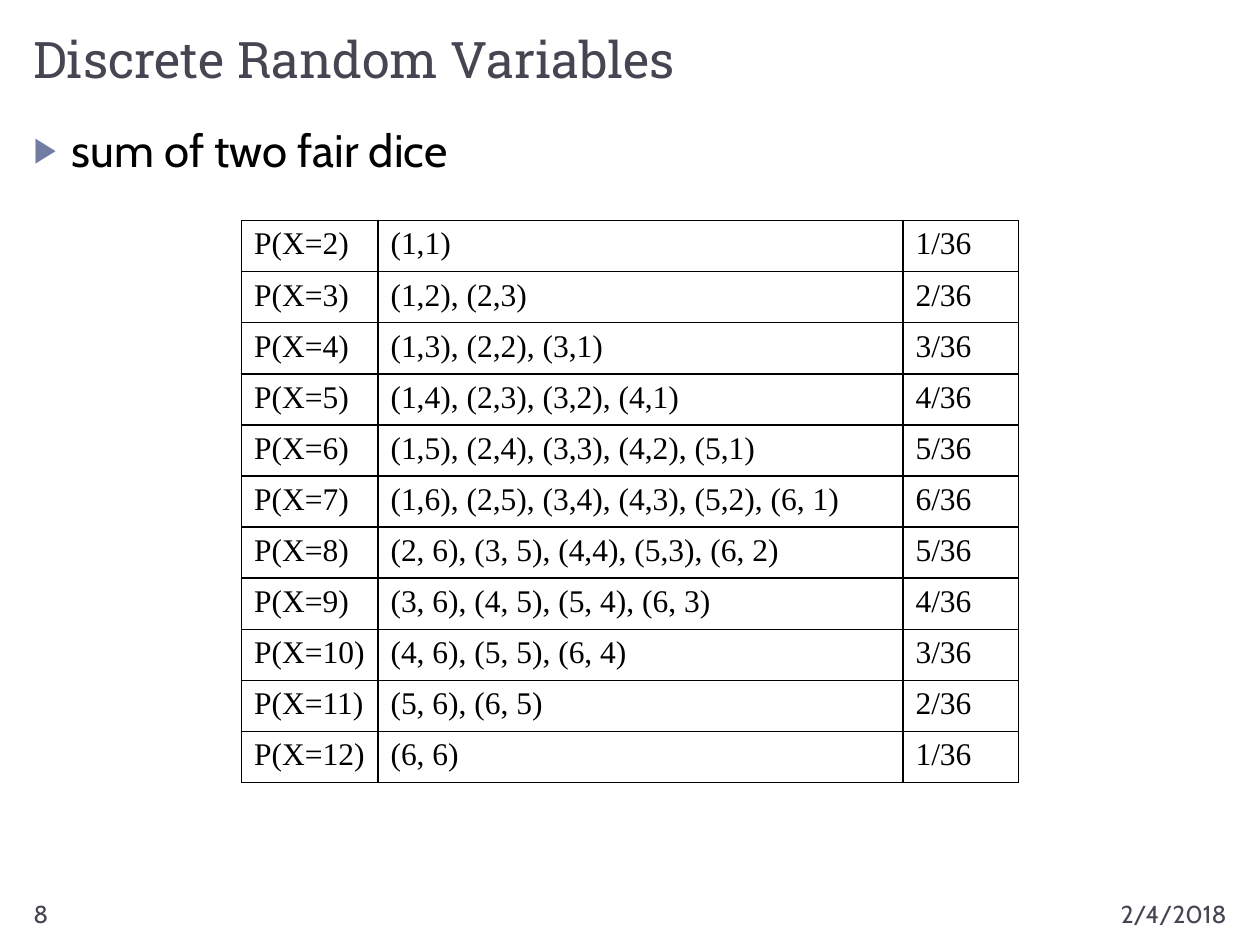
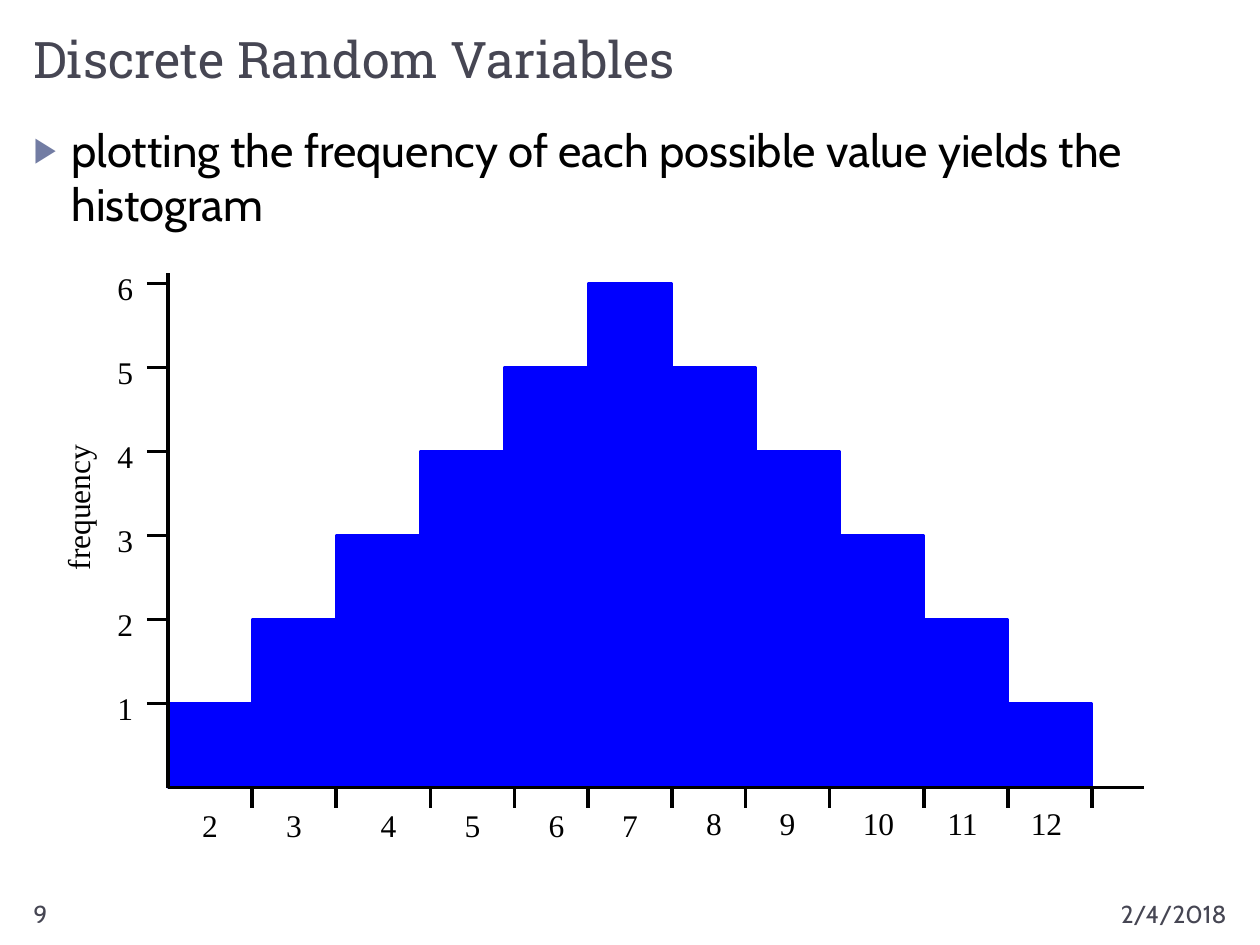
"""Build two slides on the sum of two fair dice: a probability table and a histogram."""
import pptx
import pptx.dml.color
import pptx.enum.shapes
import pptx.enum.text
import pptx.oxml.ns
import pptx.util
from lxml import etree

Pt = pptx.util.Pt
ALIGN = pptx.enum.text.PP_ALIGN
ANCHOR = pptx.enum.text.MSO_ANCHOR

TITLE = "Discrete Random Variables"
DATE = "2/4/2018"
TABLE_PAGE = ("8", "sum of two fair dice")
CHART_PAGE = ("9", "plotting the frequency of each possible value yields the histogram")
OUTCOMES = [
    ("P(X=2)", "(1,1)", "1/36"),
    ("P(X=3)", "(1,2), (2,3)", "2/36"),
    ("P(X=4)", "(1,3), (2,2), (3,1)", "3/36"),
    ("P(X=5)", "(1,4), (2,3), (3,2), (4,1)", "4/36"),
    ("P(X=6)", "(1,5), (2,4), (3,3), (4,2), (5,1)", "5/36"),
    ("P(X=7)", "(1,6), (2,5), (3,4), (4,3), (5,2), (6, 1)", "6/36"),
    ("P(X=8)", "(2, 6), (3, 5), (4,4), (5,3), (6, 2)", "5/36"),
    ("P(X=9)", "(3, 6), (4, 5), (5, 4), (6, 3)", "4/36"),
    ("P(X=10)", "(4, 6), (5, 5), (6, 4)", "3/36"),
    ("P(X=11)", "(5, 6), (6, 5)", "2/36"),
    ("P(X=12)", "(6, 6)", "1/36"),
]
FREQUENCIES = [1, 2, 3, 4, 5, 6, 5, 4, 3, 2, 1]
SUM_TICKS = [144, 192, 246, 294, 336, 384, 426, 474, 528, 576, 624]
SUM_CENTRES = [120, 168, 222, 270, 318, 360, 408, 450, 502, 550, 598]
Y_LABEL = "frequency"

HEAD_FONT, BODY_FONT, FIGURE_FONT = "Roboto Slab", "Cabin", "Times New Roman"
BLACK, WHITE, SLATE, BAR, BULLET = "000000", "FFFFFF", "464653", "0000FF", "727CA3"
MARGIN, CONTENT_W = 12, 696
COLUMNS = [78, 300, 66]
ROW_H = 29.2
UNIT, ORIGIN_X, BASE_Y, TICK = 48, 96, 450, 12
LABEL_W, LABEL_H = 40, 29


def rgb(value):
    return pptx.dml.color.RGBColor.from_string(value)


def add_xml(parent, tag, **attributes):
    return etree.SubElement(parent, pptx.oxml.ns.qn(tag), attributes)


def place(shape, x, y, w, h):
    shape.left, shape.top, shape.width, shape.height = Pt(x), Pt(y), Pt(w), Pt(h)


def write(tf, text, size, font, color, align=ALIGN.LEFT):
    tf.text = text
    p = tf.paragraphs[0]
    p.alignment = align
    r = p.runs[0]
    r.font.size, r.font.name = Pt(size), font
    r.font.color.rgb = rgb(color)
    return p


def add_text(s, text, x, y, w, h, size, font, color, align, wrap):
    box = s.shapes.add_textbox(Pt(x), Pt(y), Pt(w), Pt(h))
    box.text_frame.word_wrap = wrap
    write(box.text_frame, text, size, font, color, align)
    return box


def add_label(s, text, centre_x, y, w=LABEL_W):
    return add_text(s, text, centre_x - w / 2, y, w, LABEL_H, 18, FIGURE_FONT, BLACK,
                    ALIGN.CENTER, False)


def add_footer(s, text, x, w, align):
    add_text(s, text, x, 510, w, 19, 14, BODY_FONT, SLATE, align, True)


def add_line(s, x1, y1, x2, y2):
    line = s.shapes.add_connector(pptx.enum.shapes.MSO_CONNECTOR.STRAIGHT,
                                  Pt(x1), Pt(y1), Pt(x2), Pt(y2))
    line.line.color.rgb = rgb(BLACK)
    line.line.width = Pt(2.25)
    add_xml(line._element.spPr, "a:effectLst")


def add_bullet(p):
    pPr = p._p.get_or_add_pPr()
    pPr.set("marL", str(Pt(21.6)))
    pPr.set("indent", str(-Pt(21.6)))
    add_xml(add_xml(pPr, "a:buClr"), "a:srgbClr", val=BULLET)
    add_xml(pPr, "a:buSzPct", val="76000")
    add_xml(pPr, "a:buChar", char="▶")


def add_page(prs, number, statement):
    s = prs.slides.add_slide(prs.slide_layouts[1])
    title, body = s.shapes.title, s.placeholders[1]
    place(title, MARGIN, MARGIN, CONTENT_W, 42)
    place(body, MARGIN, 66, CONTENT_W, 432)
    for shape, anchor in ((title, ANCHOR.BOTTOM), (body, ANCHOR.TOP)):
        tf = shape.text_frame
        tf.auto_size = pptx.enum.text.MSO_AUTO_SIZE.NONE
        tf.vertical_anchor = anchor
    write(title.text_frame, TITLE, 28.8, HEAD_FONT, SLATE)
    p = write(body.text_frame, statement, 26, BODY_FONT, BLACK)
    p.space_before = Pt(6)
    add_bullet(p)
    add_footer(s, DATE, 576, 132, ALIGN.RIGHT)
    add_footer(s, number, MARGIN, 156, ALIGN.LEFT)
    return s


def add_borders(cell):
    tcPr = cell._tc.get_or_add_tcPr()
    for tag in ("a:lnL", "a:lnR", "a:lnT", "a:lnB"):
        line = add_xml(tcPr, tag, w=str(Pt(1)))
        add_xml(add_xml(line, "a:solidFill"), "a:srgbClr", val=BLACK)


def add_outcome_table(s):
    frame = s.shapes.add_table(len(OUTCOMES), len(COLUMNS), Pt(138), Pt(126),
                               Pt(sum(COLUMNS)), Pt(ROW_H * len(OUTCOMES)))
    table = frame.table
    table.first_row = table.horz_banding = False
    for column, width in zip(table.columns, COLUMNS):
        column.width = Pt(width)
    for i, outcome in enumerate(OUTCOMES):
        table.rows[i].height = Pt(ROW_H)
        for j, text in enumerate(outcome):
            cell = table.cell(i, j)
            write(cell.text_frame, text, 18, FIGURE_FONT, BLACK)
            add_borders(cell)
            cell.fill.solid()
            cell.fill.fore_color.rgb = rgb(WHITE)


def add_histogram(s):
    for i, frequency in enumerate(FREQUENCIES):
        h = frequency * UNIT
        bar = s.shapes.add_shape(pptx.enum.shapes.MSO_SHAPE.RECTANGLE, Pt(ORIGIN_X + i * UNIT),
                                 Pt(BASE_Y - h), Pt(UNIT), Pt(h))
        bar.shadow.inherit = False
        bar.fill.solid()
        bar.fill.fore_color.rgb = bar.line.color.rgb = rgb(BAR)
        bar.line.width = Pt(1.5)
    add_line(s, ORIGIN_X, BASE_Y, ORIGIN_X, 156)
    for frequency in range(1, max(FREQUENCIES) + 1):
        y = BASE_Y - frequency * UNIT
        add_label(s, str(frequency), 71.5, y - 12)
        add_line(s, ORIGIN_X - TICK, y, ORIGIN_X, y)
    add_line(s, ORIGIN_X, BASE_Y, 654, BASE_Y)
    for total, (tick, centre) in enumerate(zip(SUM_TICKS, SUM_CENTRES), start=2):
        add_line(s, tick, BASE_Y, tick, BASE_Y + TICK)
        add_label(s, str(total), centre, 457 if total < 8 else 456)
    add_label(s, Y_LABEL, 44.5, 275.5, 90).rotation = 270


def main():
    prs = pptx.Presentation()
    prs.slide_width, prs.slide_height = Pt(720), Pt(540)
    add_outcome_table(add_page(prs, *TABLE_PAGE))
    add_histogram(add_page(prs, *CHART_PAGE))
    prs.save("out.pptx")


if __name__ == "__main__":
    main()
